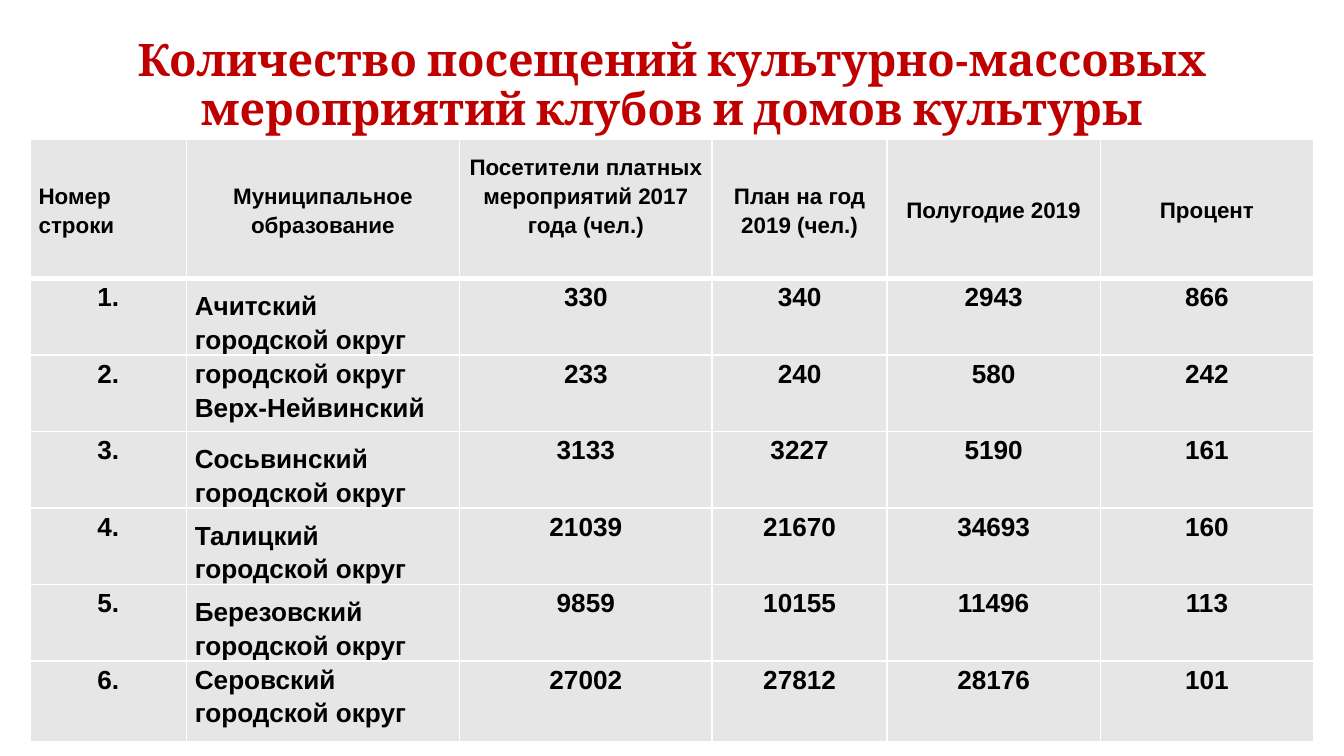
from lxml import etree
from pptx import Presentation
from pptx import util as u
from pptx.dml.color import RGBColor
from pptx.enum import text
from pptx.oxml import ns

PX = 5715  # EMU per px, 160 px to the inch
RED = RGBColor(0xC0, 0x00, 0x00)
BLACK = RGBColor(0x00, 0x00, 0x00)
GREY = RGBColor(0xE7, 0xE6, 0xE6)
WHITE = RGBColor(0xFF, 0xFF, 0xFF)

LEFT, CENTER = text.PP_ALIGN.LEFT, text.PP_ALIGN.CENTER
TOP, MIDDLE, BOTTOM = text.MSO_ANCHOR.TOP, text.MSO_ANCHOR.MIDDLE, text.MSO_ANCHOR.BOTTOM

TITLE = "Количество посещений культурно-массовых мероприятий клубов и домов культуры"
HEADERS = ["Номер строки", "Муниципальное образование",
           "Посетители платных мероприятий 2017 года (чел.)",
           "План на год 2019 (чел.)", "Полугодие 2019", "Процент"]
# Municipality, its vertical anchor, visitors 2017, plan 2019, half-year 2019, percent
MUNICIPALITIES = [
    ("Ачитский городской округ", BOTTOM, 330, 340, 2943, 866),
    ("городской округ Верх-Нейвинский", TOP, 233, 240, 580, 242),
    ("Сосьвинский городской округ", BOTTOM, 3133, 3227, 5190, 161),
    ("Талицкий городской округ", BOTTOM, 21039, 21670, 34693, 160),
    ("Березовский городской округ", BOTTOM, 9859, 10155, 11496, 113),
    ("Серовский городской округ", TOP, 27002, 27812, 28176, 101),
]
COLUMN_WIDTHS = [186, 325, 301, 208, 254, 254]
ROW_HEIGHTS = [166] + [91] * 5 + [96]


class SlideBuilder:
    def __init__(self, slide):
        self.slide = slide

    def style(self, paragraph, font, size, color, align, spacing):
        paragraph.alignment = align
        paragraph.line_spacing = spacing
        paragraph.font.name = font
        paragraph.font.size = u.Pt(size)
        paragraph.font.bold = True
        paragraph.font.color.rgb = color

    def title(self, words, left, top, width, height):
        shape = self.slide.shapes.add_textbox(*(v * PX for v in (left, top, width, height)))
        frame = shape.text_frame
        frame.word_wrap = True
        frame.vertical_anchor = MIDDLE
        frame.margin_left = frame.margin_right = 11 * PX
        frame.margin_top = 6 * PX
        frame.margin_bottom = 70 * PX  # keeps both lines above the table
        frame.text = words
        self.style(frame.paragraphs[0], "Cambria", 24, RED, CENTER, 0.9)

    def table(self, left, top, widths, heights):
        shape = self.slide.shapes.add_table(
            len(heights), len(widths), left * PX, top * PX,
            sum(widths) * PX, sum(heights) * PX)
        table = shape.table
        for column, width in zip(table.columns, widths):
            column.width = width * PX
        for row, height in zip(table.rows, heights):
            row.height = height * PX
        return table

    def cell(self, cell, words, size, align, anchor, top_line=1, bottom_line=1):
        cell.text = words
        cell.vertical_anchor = anchor
        cell.margin_left = cell.margin_right = 10 * PX
        cell.margin_top = cell.margin_bottom = 0
        self.borders(cell, L=1, R=1, T=top_line, B=bottom_line)
        cell.fill.solid()
        cell.fill.fore_color.rgb = GREY
        self.style(cell.text_frame.paragraphs[0], "Arial", size, BLACK, align, 1.15)

    def borders(self, cell, **points):
        """Draw white cell borders; sides are given in schema order L, R, T, B."""
        properties = cell._tc.get_or_add_tcPr()
        for side, width in points.items():
            line = etree.SubElement(properties, ns.qn(f"a:ln{side}"), w=str(u.Pt(width)))
            fill = etree.SubElement(line, ns.qn("a:solidFill"))
            etree.SubElement(fill, ns.qn("a:srgbClr"), val=str(WHITE))


def main():
    presentation = Presentation()
    presentation.slide_width = 1600 * PX
    presentation.slide_height = 900 * PX
    builder = SlideBuilder(presentation.slides.add_slide(presentation.slide_layouts[6]))

    builder.title(TITLE, 110, 48, 1380, 174)
    table = builder.table(36, 166, COLUMN_WIDTHS, ROW_HEIGHTS)

    for column, header in enumerate(HEADERS):
        builder.cell(table.cell(0, column), header, 12, CENTER if column else LEFT,
                     MIDDLE, bottom_line=3)
    table.cell(0, 2).margin_bottom = 35 * PX  # lifts the three-line header by half a line

    for row, (name, anchor, *values) in enumerate(MUNICIPALITIES, start=1):
        top_line = 3 if row == 1 else 1
        for column, words in enumerate([f"{row}.", name, *map(str, values)]):
            is_name = column == 1
            builder.cell(table.cell(row, column), words, 14, LEFT if is_name else CENTER,
                         anchor if is_name else TOP, top_line=top_line)

    presentation.save("out.pptx")


if __name__ == "__main__":
    main()
